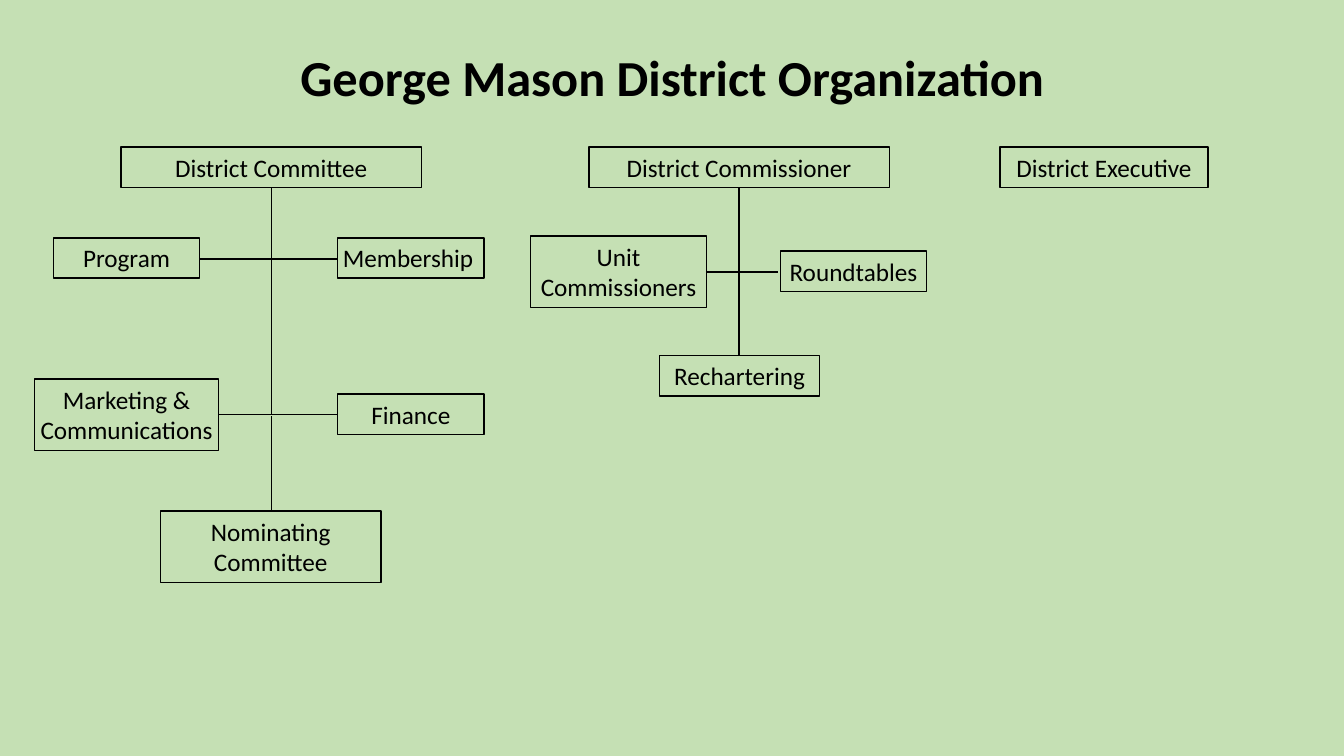
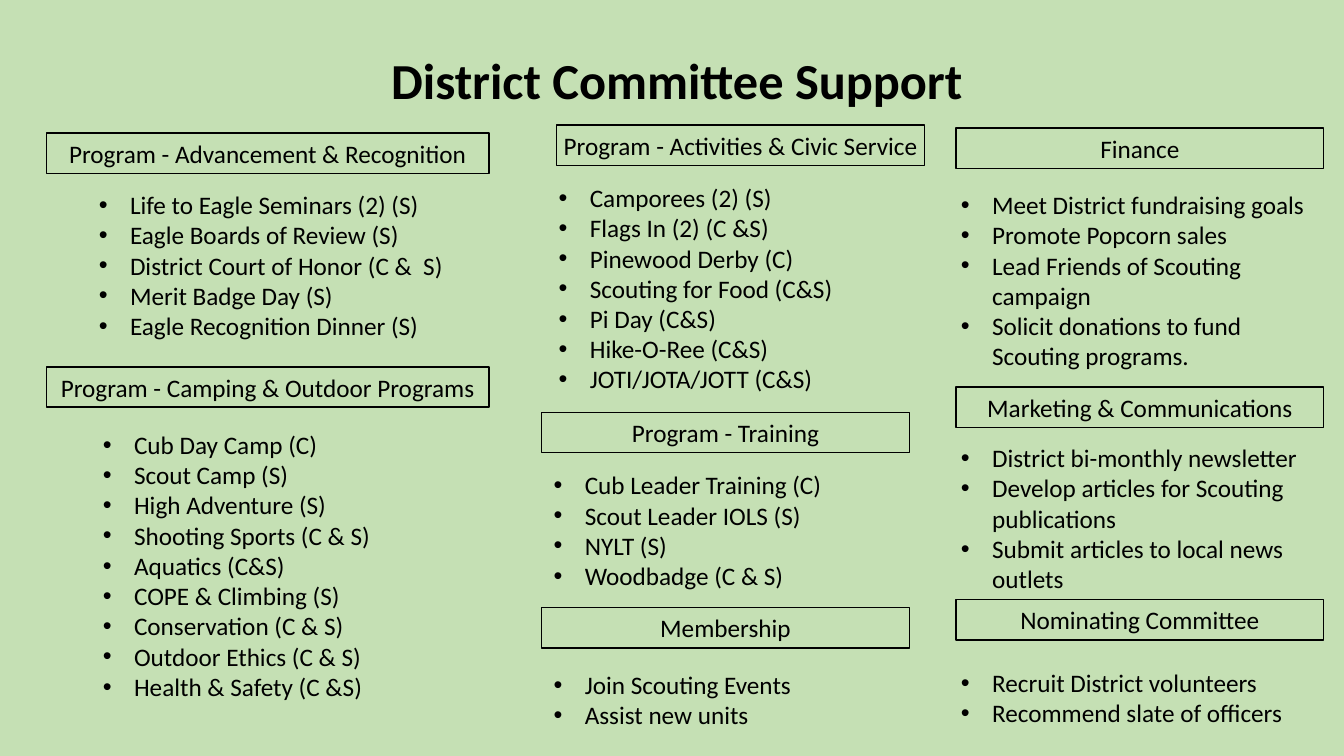
from dataclasses import dataclass

from lxml import etree
from pptx import Presentation
from pptx.dml.color import RGBColor
from pptx.enum.shapes import MSO_CONNECTOR as CONN, MSO_SHAPE as SHAPE
from pptx.enum.text import MSO_ANCHOR as ANCHOR, MSO_AUTO_SIZE as AUTO, PP_ALIGN as ALIGN
from pptx.oxml.ns import qn
from pptx.util import Emu, Pt


@dataclass(frozen=True)
class Theme:
    background: RGBColor = RGBColor.from_string("C5E0B4")
    ink: RGBColor = RGBColor.from_string("000000")
    font: str = "Calibri"
    title_size: int = 36
    body_size: int = 18
    line_width: int = 1
    inset: int = 5
    indent: int = 31
    title_height: int = 71
    line_height: float = 30.3


THEME = Theme()
EMU_PER_PX = 9144
SLIDE_SIZE = (1333, 750)

ORG_BOXES = [
    ("District Committee", 120, 146, 298, 1),
    ("District Commissioner", 584, 146, 298, 1),
    ("District Executive", 992, 146, 206, 1),
    ("Program", 53, 236, 145, 1),
    ("Marketing & Communications", 34, 376, 183, 2),
    ("Finance", 335, 391, 145, 1),
    ("Unit Commissioners", 526, 234, 175, 2),
    ("Roundtables", 774, 249, 145, 1),
    ("Rechartering", 654, 353, 159, 1),
    ("Nominating Committee", 159, 507, 219, 2),
]

COMMITTEE_X, COMMISSIONER_X = 269, 733
ORG_LINES = [
    (COMMISSIONER_X, 187, COMMISSIONER_X, 270),
    (700, 270, 772, 270),
    (COMMISSIONER_X, 270, COMMISSIONER_X, 353),
    (COMMITTEE_X, 187, COMMITTEE_X, 411),
    (198, 257, COMMITTEE_X, 257),
    (335, 257, COMMITTEE_X, 257),
    (217, 411, COMMITTEE_X, 411),
    (COMMITTEE_X, 411, 335, 411),
    (COMMITTEE_X, 413, COMMITTEE_X, 507),
]

SUPPORT_SECTIONS = [
    ("Program - Advancement & Recognition", (46, 132, 439), (93, 183, 357, 6), [
        "Life to Eagle Seminars (2) (S)",
        "Eagle Boards of Review (S)",
        "District Court of Honor (C &  S)",
        "Merit Badge Day (S)",
        "Eagle Recognition Dinner (S)",
    ]),
    ("Program - Camping & Outdoor Programs", (46, 364, 439), (97, 421, 320, 9), [
        "Cub Day Camp (C)",
        "Scout Camp (S)",
        "High Adventure (S)",
        "Shooting Sports (C & S)",
        "Aquatics (C&S)",
        "COPE & Climbing (S)",
        "Conservation (C & S)",
        "Outdoor Ethics (C & S)",
        "Health & Safety (C &S)",
    ]),
    ("Program - Activities & Civic Service", (552, 124, 365), (549, 176, 315, 7), [
        "Camporees (2) (S)",
        "Flags In (2) (C &S)",
        "Pinewood Derby (C)",
        "Scouting for Food (C&S)",
        "Pi Day (C&S)",
        "Hike-O-Ree (C&S)",
        "JOTI/JOTA/JOTT (C&S)",
    ]),
    ("Program - Training", (537, 409, 365), (544, 461, 351, 4), [
        "Cub Leader Training (C)",
        "Scout Leader IOLS (S)",
        "NYLT (S)",
        "Woodbadge (C & S)",
    ]),
    ("Membership", (537, 603, 365), (544, 659, 302, 2), [
        "Join Scouting Events",
        "Assist new units",
    ]),
    ("Finance", (948, 127, 365), (948, 183, 365, 6), [
        "Meet District fundraising goals",
        "Promote Popcorn sales",
        "Lead Friends of Scouting campaign",
        "Solicit donations to fund Scouting programs.",
    ]),
    ("Marketing & Communications", (948, 384, 365), (948, 434, 351, 5), [
        "District bi-monthly newsletter",
        "Develop articles for Scouting publications",
        "Submit articles to local news outlets",
    ]),
    ("Nominating Committee", (948, 595, 365), (948, 657, 341, 2), [
        "Recruit District volunteers",
        "Recommend slate of officers",
    ]),
]


def px(n):
    """Turn px into EMU."""
    return Emu(round(n * EMU_PER_PX))


def text_height(lines):
    """Give the height in px of a box holding a number of body lines."""
    return round(2 * THEME.inset + THEME.line_height * lines)


def add_bullet(p):
    """Give a paragraph a round bullet with a hanging indent."""
    pPr = p._p.get_or_add_pPr()
    pPr.set("marL", str(px(THEME.indent)))
    pPr.set("indent", str(-px(THEME.indent)))
    etree.SubElement(pPr, qn("a:buFont")).set("typeface", "Arial")
    etree.SubElement(pPr, qn("a:buChar")).set("char", "•")


def fill_text(sp, lines, size, align=ALIGN.LEFT, bold=False, bullets=False):
    """Write paragraphs into a shape in the theme's type style."""
    tf = sp.text_frame
    tf.text = "\n".join(lines)
    tf.word_wrap = True
    tf.auto_size = AUTO.SHAPE_TO_FIT_TEXT
    tf.vertical_anchor = ANCHOR.TOP
    tf.margin_left = tf.margin_right = tf.margin_top = tf.margin_bottom = px(THEME.inset)
    for p in tf.paragraphs:
        p.alignment = align
        if bullets:
            add_bullet(p)
        for r in p.runs:
            r.font.name = THEME.font
            r.font.size = Pt(size)
            r.font.bold = bold
            r.font.color.rgb = THEME.ink


def add_title(s, text, left, top, width, align=ALIGN.CENTER):
    """Add a bold slide title."""
    sp = s.shapes.add_textbox(px(left), px(top), px(width), px(THEME.title_height))
    fill_text(sp, [text], THEME.title_size, align, bold=True)


def add_box(s, text, left, top, width, lines=1, align=ALIGN.CENTER):
    """Add an outlined box with a label."""
    sp = s.shapes.add_shape(SHAPE.RECTANGLE, px(left), px(top), px(width), px(text_height(lines)))
    sp.shadow.inherit = False
    sp.fill.background()
    sp.line.color.rgb = THEME.ink
    sp.line.width = Pt(THEME.line_width)
    fill_text(sp, [text], THEME.body_size, align)


def add_list(s, items, left, top, width, lines):
    """Add a bulleted list."""
    sp = s.shapes.add_textbox(px(left), px(top), px(width), px(text_height(lines)))
    fill_text(sp, items, THEME.body_size, bullets=True)


def add_line(s, x1, y1, x2, y2):
    """Add a straight connector without a shadow."""
    line = s.shapes.add_connector(CONN.STRAIGHT, px(x1), px(y1), px(x2), px(y2))
    line.line.color.rgb = THEME.ink
    line.line.width = Pt(THEME.line_width)
    etree.SubElement(line._element.spPr, qn("a:effectLst"))


def add_slide(prs):
    """Add a blank slide with the theme background."""
    s = prs.slides.add_slide(prs.slide_layouts[6])
    s.background.fill.solid()
    s.background.fill.fore_color.rgb = THEME.background
    return s


def build_organization(prs):
    """Build the organization chart."""
    s = add_slide(prs)
    add_title(s, "George Mason District Organization", 288, 41, 758)
    for box in ORG_BOXES:
        add_box(s, *box)
    add_box(s, "Membership", 335, 236, 145, align=ALIGN.LEFT)
    for ends in ORG_LINES:
        add_line(s, *ends)


def build_support(prs):
    """Build the overview of committee support."""
    s = add_slide(prs)
    add_title(s, "District Committee Support", 383, 44, 630, ALIGN.LEFT)
    for heading, box, area, items in SUPPORT_SECTIONS:
        add_box(s, heading, *box)
        add_list(s, items, *area)


def main():
    """Build and save the presentation."""
    prs = Presentation()
    prs.slide_width, prs.slide_height = map(px, SLIDE_SIZE)
    build_organization(prs)
    build_support(prs)
    prs.save("out.pptx")


if __name__ == "__main__":
    main()
